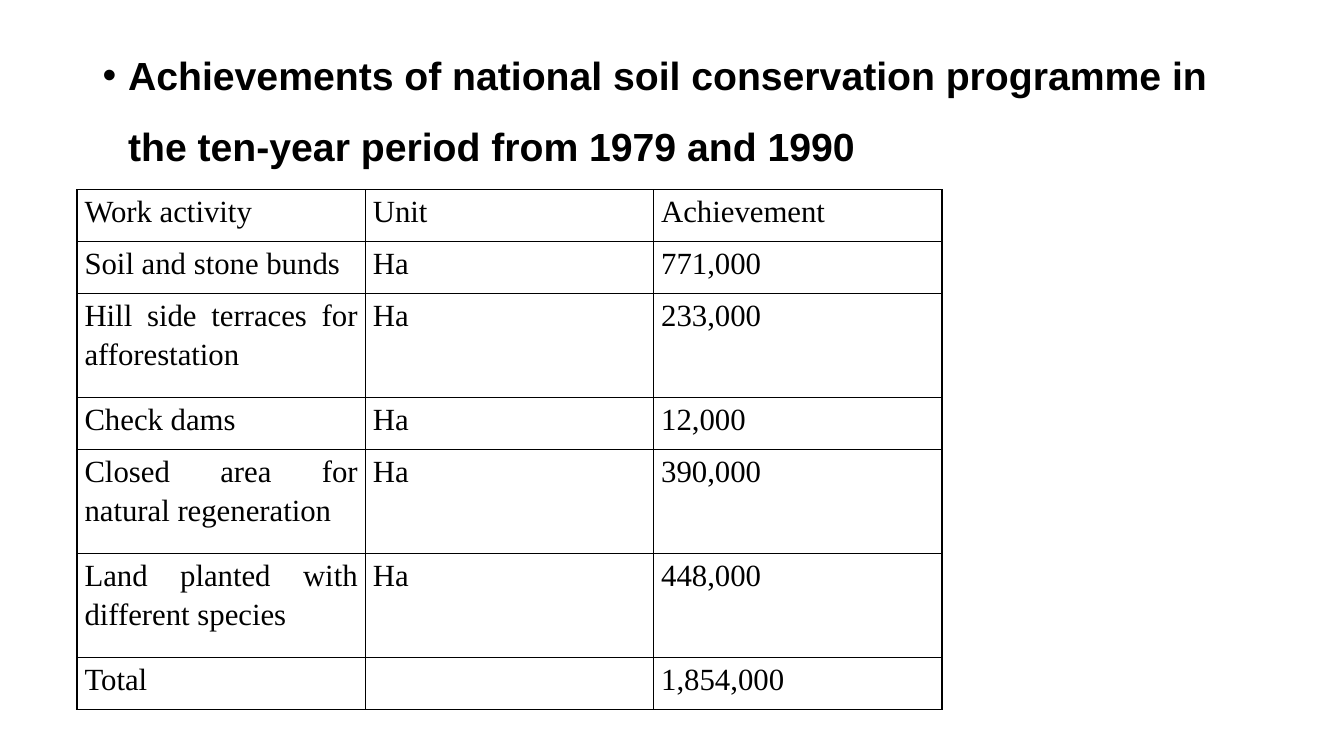
from lxml.etree import SubElement
from pptx import Presentation
from pptx.dml.color import RGBColor
from pptx.enum.text import PP_ALIGN
from pptx.oxml.ns import qn
from pptx.util import Cm, Pt

BLACK = RGBColor(0x00, 0x00, 0x00)

HEADING = "Achievements of national soil conservation programme in the ten-year period from 1979 and 1990"
ACHIEVEMENTS = [
    ("Work activity", "Unit", "Achievement"),
    ("Soil and stone bunds", "Ha", "771,000"),
    ("Hill side terraces for afforestation", "Ha", "233,000"),
    ("Check dams", "Ha", "12,000"),
    ("Closed area for natural regeneration", "Ha", "390,000"),
    ("Land planted with different species", "Ha", "448,000"),
    ("Total", "", "1,854,000"),
]
LINES_PER_ROW = [1, 1, 2, 1, 2, 2, 1]


def apply_format(target, values):
    for name, value in values.items():
        setattr(target, name, value)


class SlideBuilder:
    """Holds the style and the current slide, and adds each kind of element."""

    heading_font = {"name": "Arial", "size": Pt(28), "bold": True}
    heading_paragraph = {"line_spacing": 1.5, "space_before": Pt(10)}
    cell_font = {"name": "Times New Roman", "size": Pt(22), "bold": False}
    cell_paragraph = {"line_spacing": 1.15, "alignment": PP_ALIGN.JUSTIFY}
    cell_margins = {
        "margin_left": Cm(0.19),
        "margin_right": Cm(0.19),
        "margin_top": 0,
        "margin_bottom": 0,
    }
    plain_table = {"first_row": False, "horz_banding": False}
    row_unit = Cm(1.31)
    bullet_indent = Cm(0.64)
    border_width = Pt(1)

    def __init__(self, deck):
        self.slide = deck.slides.add_slide(deck.slide_layouts[6])

    def add_span(self, para, text, paragraph_format, font_format):
        apply_format(para, paragraph_format)
        span = para.add_run()
        span.text = text
        apply_format(span.font, font_format)
        span.font.color.rgb = BLACK

    def add_bullet_text(self, text, left, top, width, height):
        box = self.slide.shapes.add_textbox(left, top, width, height)
        box.text_frame.word_wrap = True
        para = box.text_frame.paragraphs[0]
        self.add_span(para, text, self.heading_paragraph, self.heading_font)
        properties = para._p.get_or_add_pPr()
        properties.set("marL", str(self.bullet_indent))
        properties.set("indent", str(-self.bullet_indent))
        SubElement(properties, qn("a:buFont"), typeface="Arial")
        SubElement(properties, qn("a:buChar"), char="•")

    def add_borders(self, cell):
        properties = cell._tc.get_or_add_tcPr()
        for side in ("a:lnL", "a:lnR", "a:lnT", "a:lnB"):
            line = SubElement(properties, qn(side), w=str(self.border_width))
            fill = SubElement(line, qn("a:solidFill"))
            SubElement(fill, qn("a:srgbClr"), val=str(BLACK))

    def add_grid(self, rows, lines_per_row, left, top, width):
        height = self.row_unit * sum(lines_per_row)
        frame = self.slide.shapes.add_table(len(rows), len(rows[0]), left, top, width, height)
        table = frame.table
        apply_format(table, self.plain_table)
        for row_index, (texts, lines) in enumerate(zip(rows, lines_per_row)):
            table.rows[row_index].height = self.row_unit * lines
            for column_index, text in enumerate(texts):
                cell = table.cell(row_index, column_index)
                apply_format(cell, self.cell_margins)
                self.add_borders(cell)
                cell.fill.background()
                if text:
                    para = cell.text_frame.paragraphs[0]
                    self.add_span(para, text, self.cell_paragraph, self.cell_font)


def main():
    deck = Presentation()
    apply_format(deck, {"slide_width": Cm(33.87), "slide_height": Cm(19.05)})
    page = SlideBuilder(deck)
    page.add_bullet_text(HEADING, Cm(2.34), Cm(0.58), Cm(29.21), Cm(18.08))
    page.add_grid(ACHIEVEMENTS, LINES_PER_ROW, Cm(1.94), Cm(4.78), Cm(21.8))
    deck.save("out.pptx")


if __name__ == "__main__":
    main()
